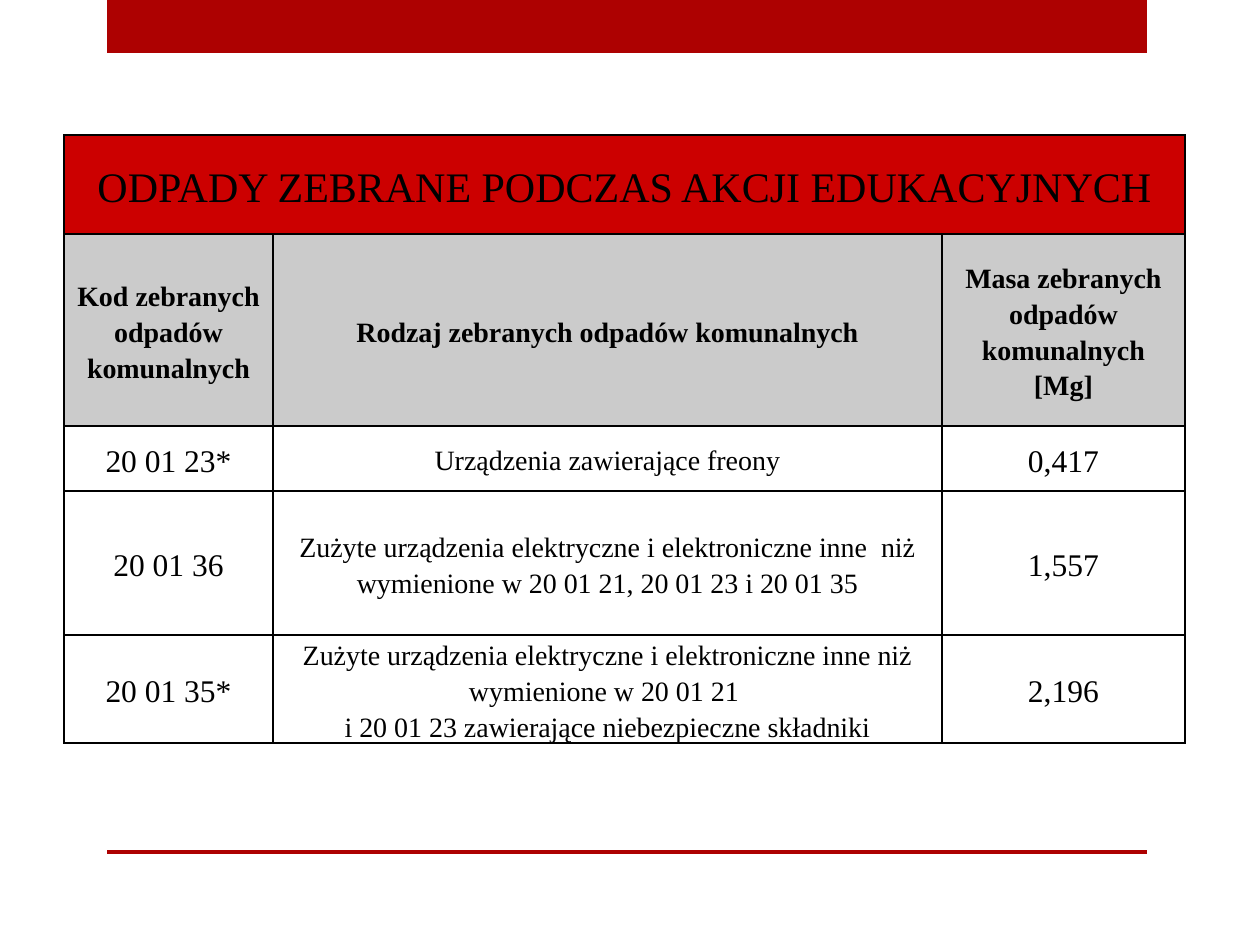
from dataclasses import dataclass

from lxml import etree
from pptx import Presentation
from pptx.dml.color import RGBColor
from pptx.enum.shapes import MSO_SHAPE
from pptx.enum.text import MSO_ANCHOR, PP_ALIGN
from pptx.oxml.ns import qn
from pptx.util import Pt

RECT = MSO_SHAPE.RECTANGLE
MIDDLE = MSO_ANCHOR.MIDDLE
CENTER = PP_ALIGN.CENTER
SCALE = 914400 // 126


@dataclass(frozen=True)
class Theme:
    """Colours, font and type sizes."""
    bar: str = "AD0101"
    title: str = "CC0000"
    head: str = "CBCBCB"
    ink: str = "000000"
    font: str = "Times New Roman"
    big: int = 24
    mid: int = 18
    small: int = 16


class Deck:
    """Draws elements on the current slide in one style."""

    def __init__(self, theme):
        """Start a deck with one blank slide."""
        self.theme = theme
        self.prs = Presentation()
        self.prs.slide_width = 1260 * SCALE
        self.prs.slide_height = 945 * SCALE
        self.slide = self.prs.slides.add_slide(self.prs.slide_layouts[6])

    def bar(self, *box):
        """Draw a plain coloured bar."""
        shape = self.slide.shapes.add_shape(RECT, *(n * SCALE for n in box))
        shape.shadow.inherit = False
        shape.fill.solid()
        shape.fill.fore_color.rgb = RGBColor.from_string(self.theme.bar)
        shape.line.fill.background()

    def table(self, left, top, cols, rows):
        """Add an unstyled table with the given column widths and row heights."""
        box = (left, top, sum(cols), sum(rows))
        frame = self.slide.shapes.add_table(
            len(rows), len(cols), *(n * SCALE for n in box))
        table = frame.table
        table.first_row = table.horz_banding = False
        for col, width in zip(table.columns, cols):
            col.width = width * SCALE
        for row, height in zip(table.rows, rows):
            row.height = height * SCALE
        return table

    def cell(self, cell, text, size, fill=None, bold=False, after=0):
        """Fill and format one table cell."""
        cell.vertical_anchor = MIDDLE
        cell.margin_left = cell.margin_right = 6 * SCALE
        cell.margin_top, cell.margin_bottom = SCALE, 0
        if fill:
            cell.fill.solid()
            cell.fill.fore_color.rgb = RGBColor.from_string(fill)
        else:
            cell.fill.background()
        para = cell.text_frame.paragraphs[0]
        para.text = text
        para.alignment = CENTER
        para.line_spacing = 1.15
        para.space_after = Pt(after)
        font = para.font
        font.name, font.size, font.bold = self.theme.font, Pt(size), bold
        font.color.rgb = RGBColor.from_string(self.theme.ink)
        self.edge(cell)

    def edge(self, cell):
        """Draw thin lines on all four sides of a cell."""
        props = cell._tc.get_or_add_tcPr()
        for spot, side in enumerate("LRTB"):
            line = etree.Element(qn(f"a:ln{side}"), w=str(Pt(1)))
            fill = etree.SubElement(line, qn("a:solidFill"))
            etree.SubElement(fill, qn("a:srgbClr"), val=self.theme.ink)
            props.insert(spot, line)


TITLE = "ODPADY ZEBRANE PODCZAS AKCJI EDUKACYJNYCH"
HEADS = (
    "Kod zebranych odpadów komunalnych",
    "Rodzaj zebranych odpadów komunalnych",
    "Masa zebranych odpadów komunalnych\n[Mg]",
)
WASTE = (
    ("20 01 23*", "Urządzenia zawierające freony", "0,417"),
    ("20 01 36", "Zużyte urządzenia elektryczne i elektroniczne inne  niż "
     "wymienione w 20 01 21, 20 01 23 i 20 01 35", "1,557"),
    ("20 01 35*", "Zużyte urządzenia elektryczne i elektroniczne inne niż "
     "wymienione w 20 01 21 \ni 20 01 23 zawierające niebezpieczne składniki",
     "2,196"),
)


def main():
    """Build and save the slide."""
    theme = Theme()
    deck = Deck(theme)
    deck.bar(107, 0, 1040, 53)
    deck.bar(107, 850, 1040, 4)
    table = deck.table(64, 135, (209, 669, 243), (99, 192, 65, 144, 96))
    table.cell(0, 0).merge(table.cell(0, 2))
    for col, text in enumerate((TITLE, "", "")):
        deck.cell(table.cell(0, col), text, theme.big, theme.title)
    for col, text in enumerate(HEADS):
        deck.cell(table.cell(1, col), text, theme.small, theme.head, bold=True)
    sizes = (theme.mid, theme.small, theme.mid)
    for row, texts in enumerate(WASTE, 2):
        for col, (text, size) in enumerate(zip(texts, sizes)):
            deck.cell(table.cell(row, col), text, size, after=10)
    deck.prs.save("out.pptx")


if __name__ == "__main__":
    main()
